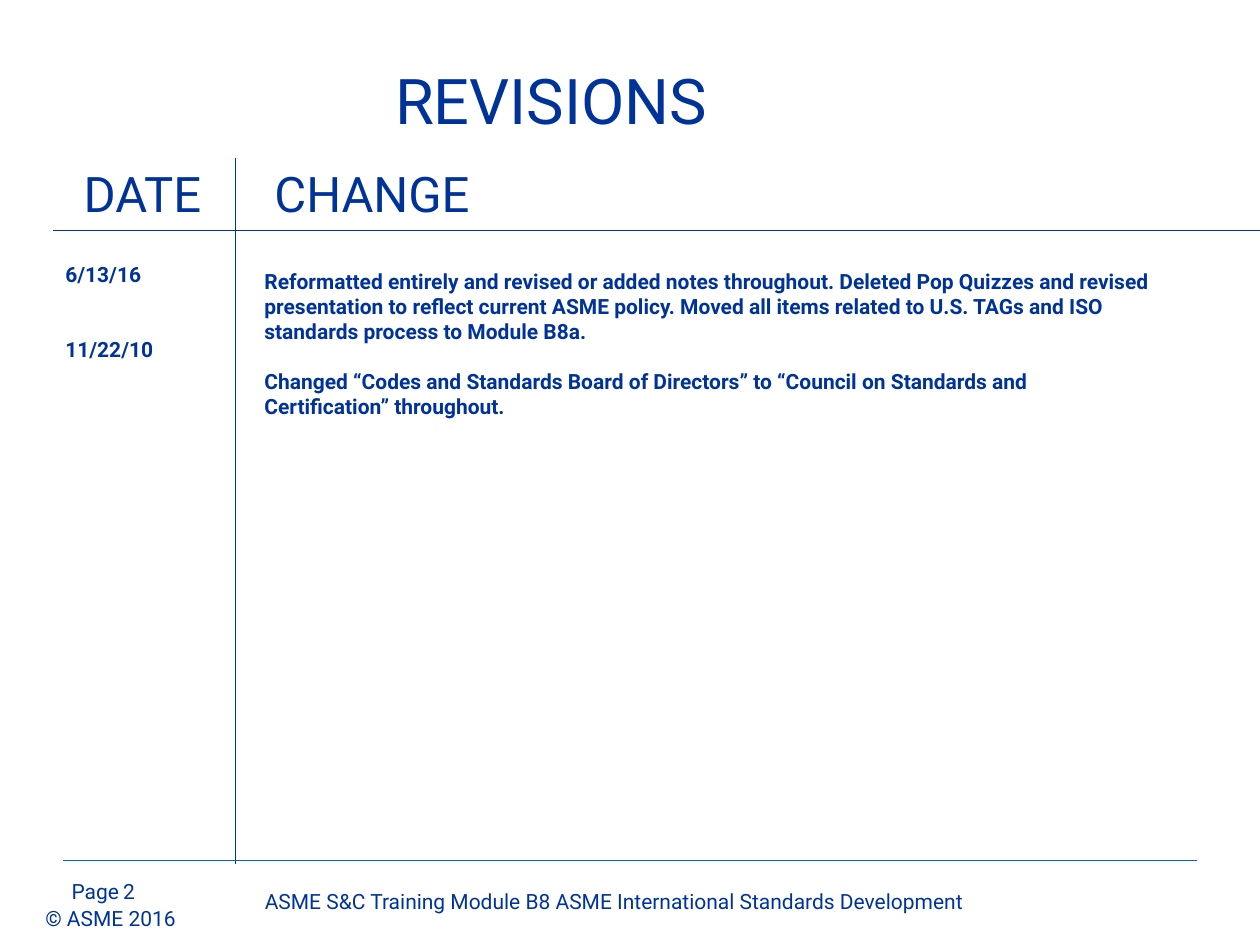
from pptx import Presentation
from pptx.dml.color import RGBColor
from pptx.enum.shapes import MSO_CONNECTOR
from pptx.enum.text import MSO_ANCHOR, PP_ALIGN
from pptx.oxml.ns import qn
from pptx.util import Inches, Pt
from lxml.etree import SubElement

NAVY = RGBColor(0x00, 0x33, 0x99)
BLUE = RGBColor(0x00, 0x66, 0xCC)
FONT = "Roboto"

REVISIONS = [
    ("6/13/16",
     "Reformatted entirely and revised or added notes throughout. Deleted Pop "
     "Quizzes and revised presentation to reflect current ASME policy. Moved all "
     "items related to U.S. TAGs and ISO standards process to Module B8a."),
    ("11/22/10",
     "Changed “Codes and Standards Board of Directors” to “Council on Standards "
     "and Certification” throughout."),
]


def format_paragraph(p, size, bold=False, align=PP_ALIGN.LEFT):
    p.alignment = align
    p.font.name = FONT
    p.font.size = Pt(size)
    p.font.bold = bold
    p.font.color.rgb = NAVY


def add_title(s, text):
    title = s.shapes.title
    title.left, title.top = Inches(0), Inches(0.33)
    title.width, title.height = Inches(8.75), Inches(0.92)
    tf = title.text_frame
    tf.text = text
    tf.vertical_anchor = MSO_ANCHOR.MIDDLE
    format_paragraph(tf.paragraphs[0], 36, align=PP_ALIGN.CENTER)


def add_text(s, x, y, w, h, texts, size=12, bold=False, align=PP_ALIGN.LEFT, gap=0):
    """Add one paragraph per text, with gap points between them."""
    tf = s.shapes.add_textbox(Inches(x), Inches(y), Inches(w), Inches(h)).text_frame
    tf.word_wrap = True
    for i, text in enumerate(texts):
        p = tf.paragraphs[0] if i == 0 else tf.add_paragraph()
        p.text = text
        format_paragraph(p, size, bold, align)
        if i:
            p.space_before = Pt(gap)
    return tf


def add_line(s, x1, y1, x2, y2, color=NAVY, width=1):
    line = s.shapes.add_connector(MSO_CONNECTOR.STRAIGHT, Inches(x1), Inches(y1),
                                  Inches(x2), Inches(y2))
    line.line.color.rgb = color
    line.line.width = Pt(width)
    SubElement(line._element.spPr, qn("a:effectLst"))


def add_footer(s):
    add_line(s, 0.5, 6.83, 9.5, 6.83, BLUE, 0.75)
    add_text(s, 0.47, 6.92, 0.77, 0.26, ["Page"])
    add_text(s, 0.88, 6.92, 0.47, 0.23, ["2"])
    tf = add_text(s, 0.36, 7.19, 1.04, 0.2, ["© ASME 2016"])
    tf.word_wrap = False
    tf.margin_left = tf.margin_top = tf.margin_right = tf.margin_bottom = 0
    add_text(s, 1.54, 7, 6.67, 0.26,
             ["ASME S&C Training Module B8 ASME International Standards Development"],
             align=PP_ALIGN.CENTER)


def add_revisions(s):
    dates, changes = zip(*REVISIONS)
    add_text(s, 0.42, 1.25, 1.42, 0.59, ["DATE"], 28, align=PP_ALIGN.CENTER)
    add_text(s, 2.08, 1.25, 7.67, 0.59, ["CHANGE"], 28)
    add_line(s, 1.87, 1.25, 1.87, 6.86)
    add_line(s, 0.42, 1.83, 10, 1.83)
    add_text(s, 0.42, 2.03, 1.45, 4.82, dates, bold=True, gap=28)
    add_text(s, 2, 2.08, 7.25, 1.72, changes, bold=True, gap=14)


def main():
    prs = Presentation()
    prs.slide_width, prs.slide_height = Inches(10), Inches(7.5)
    s = prs.slides.add_slide(prs.slide_layouts[5])
    add_title(s, "REVISIONS")
    add_revisions(s)
    add_footer(s)
    prs.save("out.pptx")


if __name__ == "__main__":
    main()
